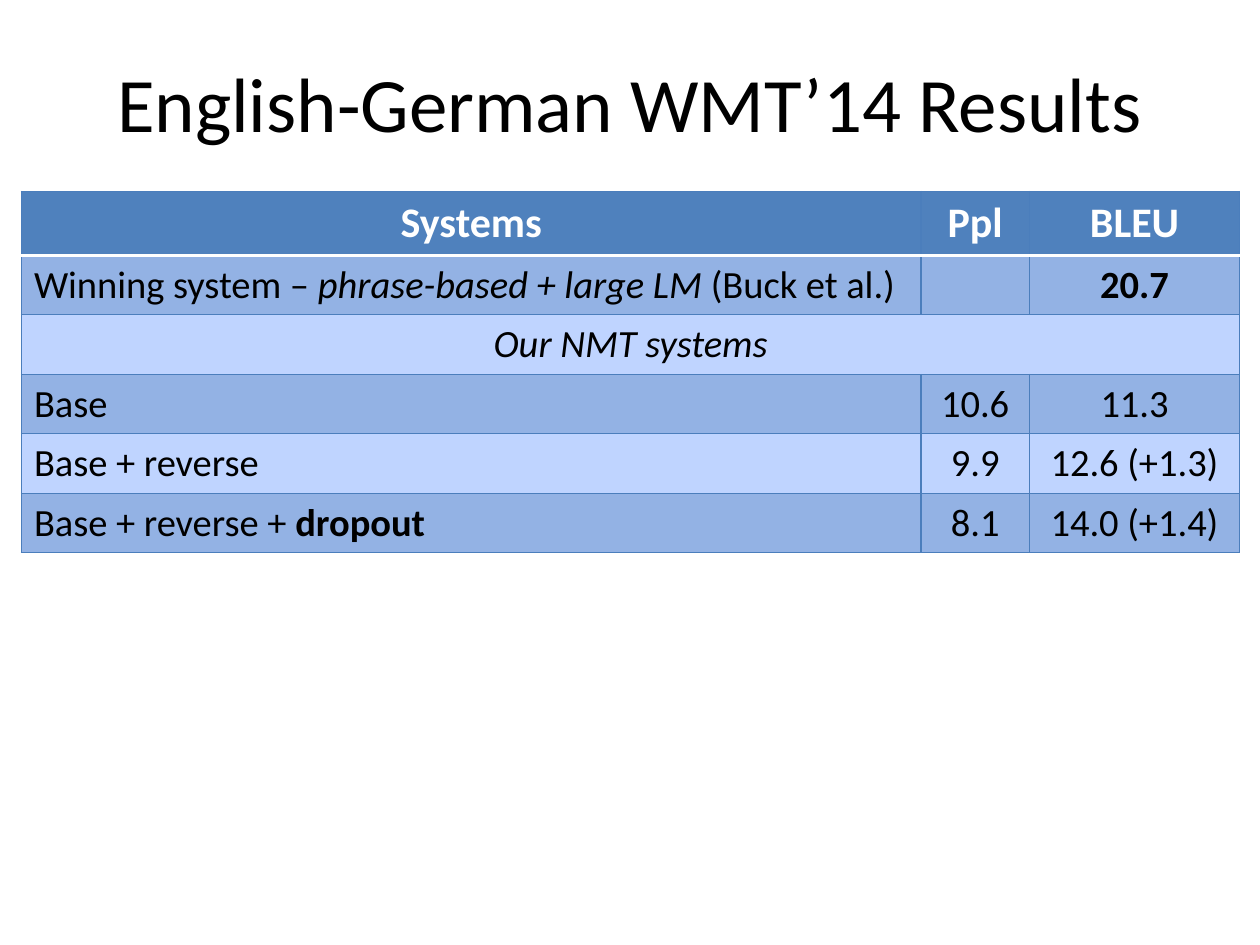
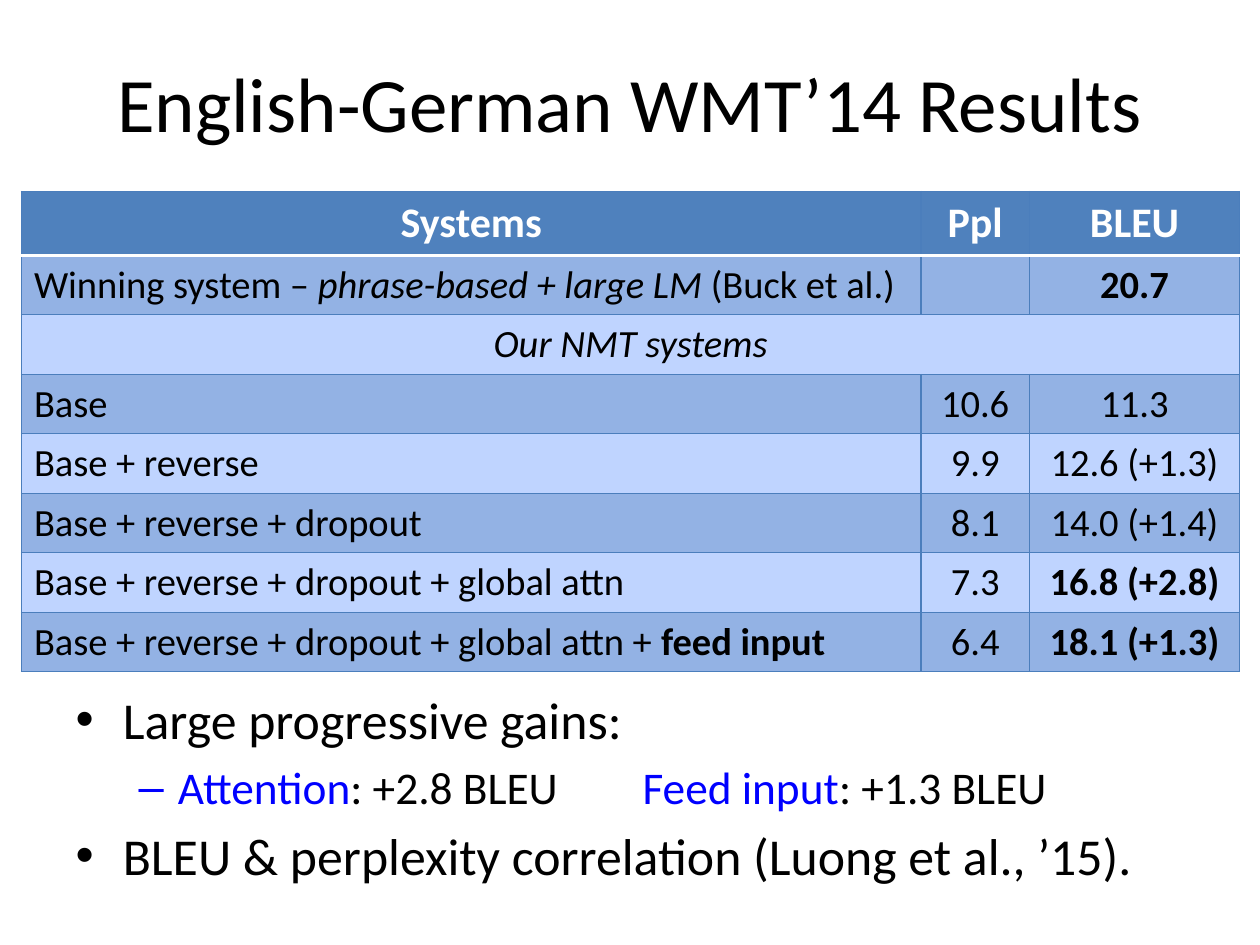
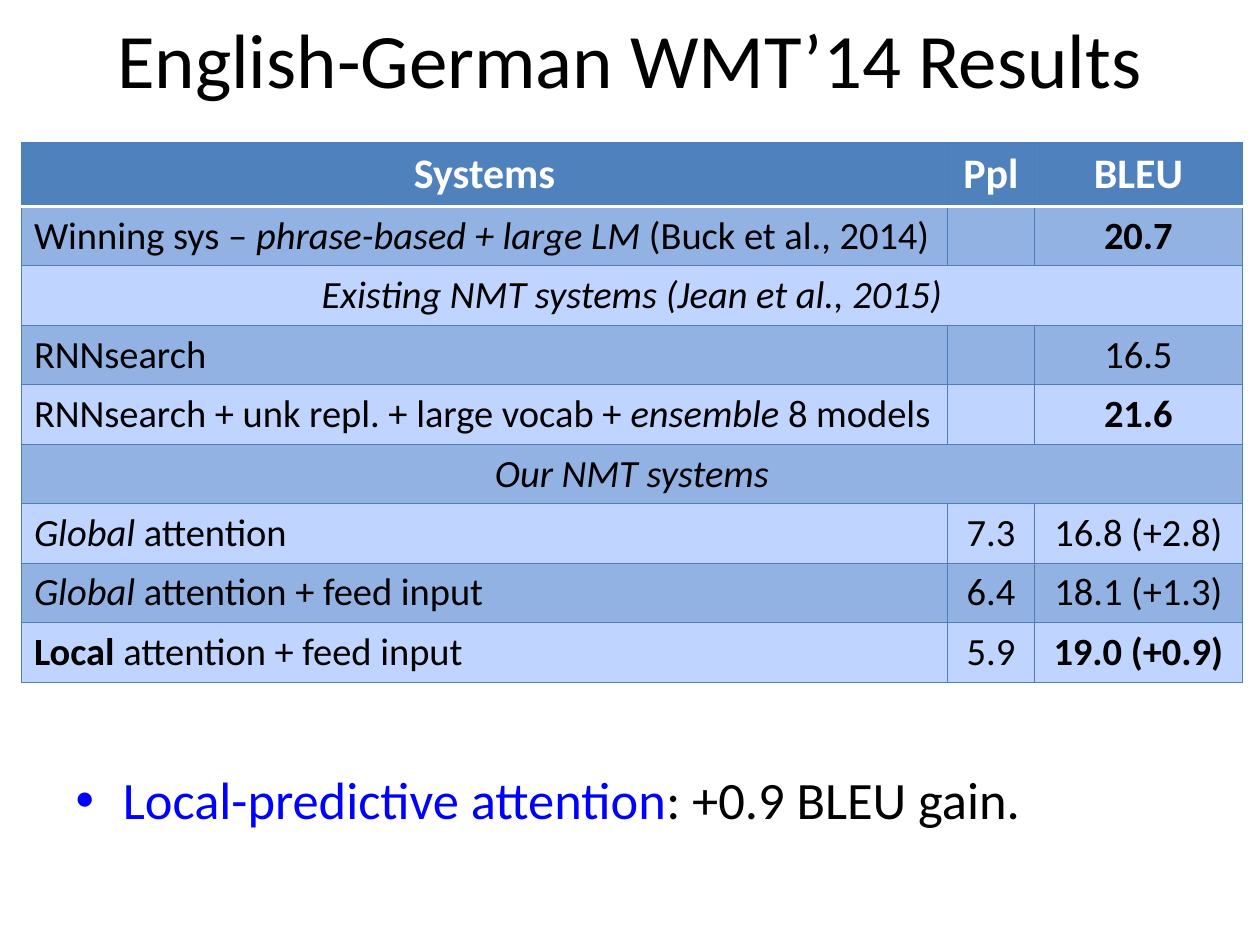
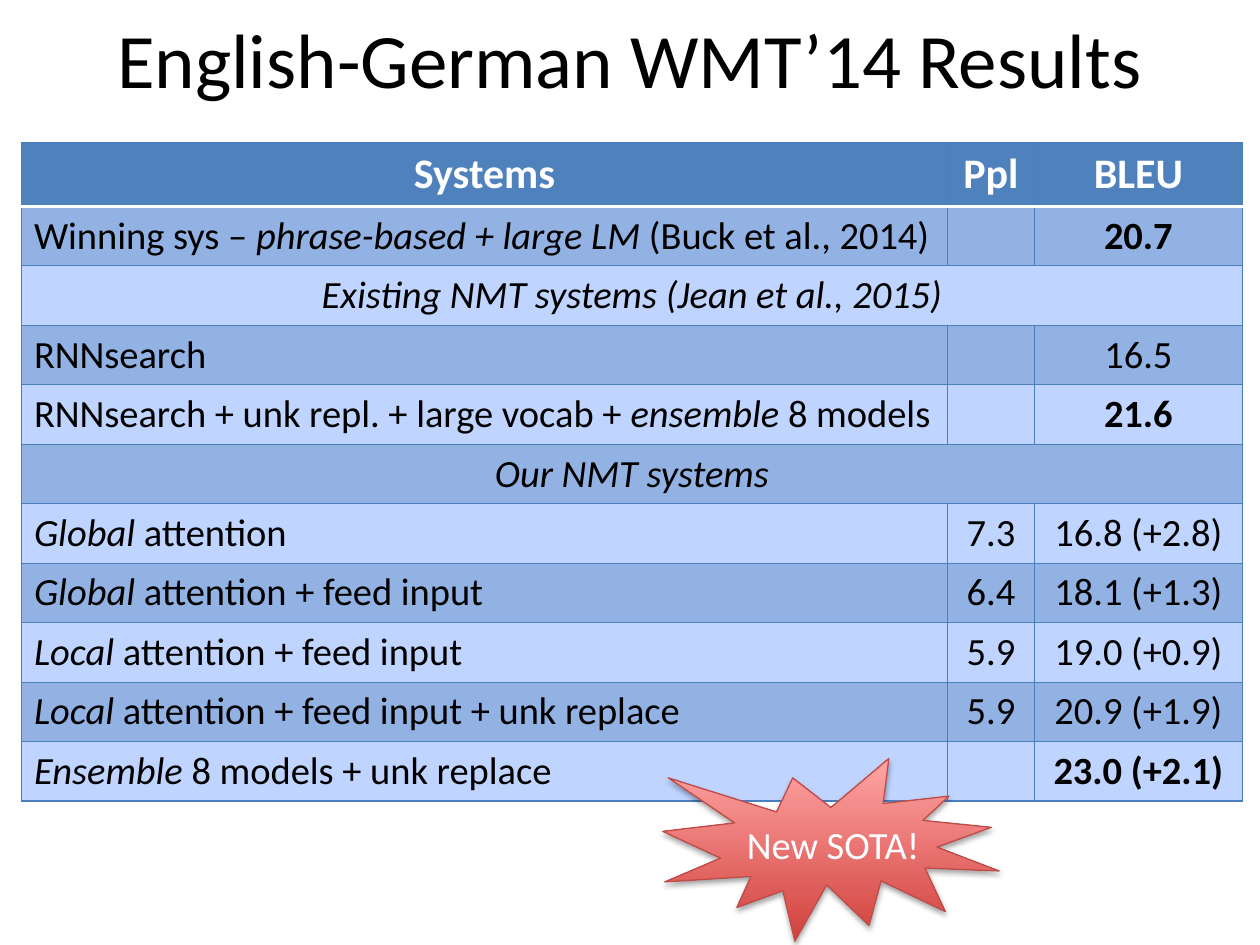
from lxml import etree
from pptx import Presentation
from pptx.dml.color import RGBColor
from pptx.enum.shapes import MSO_SHAPE
from pptx.enum.text import MSO_ANCHOR, MSO_AUTO_SIZE, PP_ALIGN
from pptx.oxml.ns import qn
from pptx.util import Inches, Pt

COLORS = {
    "text": "000000", "white": "FFFFFF", "accent": "0000FF",
    "header": "4F81BD", "border": "4B7EBC",
    "band_dark": "93B2E4", "band_light": "BFD4FF",
    "burst_bottom": "D1403C", "burst_top": "FFA6A5", "burst_line": "BF4C48",
}
FONT = "Calibri"
TITLE = "English-German WMT’14 Results"
HEADER = ["Systems", "Ppl", "BLEU"]
HEADER_HEIGHT, ROW_HEIGHT = 0.5, 0.47
TITLE_ONLY, TITLE_AND_BODY = 5, 1

# A text is a list of parts: plain strings, or (string, style) with b = bold,
# i = italic, a = accent colour. A row with one text spans the whole table.
OUR_SYSTEMS = [[("Our NMT systems", "i")]]
BASE_ROWS = [
    [["Winning system – ", ("phrase-based + large LM ", "i"), "(Buck et al.)"], [], [("20.7", "b")]],
    OUR_SYSTEMS,
    [["Base"], ["10.6"], ["11.3"]],
    [["Base + reverse"], ["9.9"], ["12.6 (+1.3)"]],
]
DROPOUT_ROWS = BASE_ROWS + [
    [["Base + reverse + ", ("dropout", "b")], ["8.1"], ["14.0 (+1.4)"]],
]
ATTENTION_ROWS = BASE_ROWS + [
    [["Base + reverse + dropout"], ["8.1"], ["14.0 (+1.4)"]],
    [["Base + reverse + dropout + global attn"], ["7.3"], [("16.8 (+2.8)", "b")]],
    [["Base + reverse + dropout + global attn + ", ("feed input", "b")], ["6.4"], [("18.1 (+1.3)", "b")]],
]
COMPARISON_ROWS = [
    [["Winning sys – ", ("phrase-based + large LM ", "i"), "(Buck et al., 2014)"], [], [("20.7", "b")]],
    [[("Existing NMT systems (Jean et al., 2015)", "i")]],
    [["RNNsearch"], [], ["16.5"]],
    [["RNNsearch + unk repl. + large vocab + ", ("ensemble", "i"), " 8 models"], [], [("21.6", "b")]],
    OUR_SYSTEMS,
    [[("Global ", "i"), "attention"], ["7.3"], ["16.8 (+2.8)"]],
    [[("Global ", "i"), "attention + feed input"], ["6.4"], ["18.1 (+1.3)"]],
]
LOCAL_ROWS = COMPARISON_ROWS + [
    [[("Local ", "b"), "attention + feed input"], ["5.9"], [("19.0 (+0.9)", "b")]],
]
ENSEMBLE_ROWS = COMPARISON_ROWS + [
    [[("Local ", "i"), "attention + feed input"], ["5.9"], ["19.0 (+0.9)"]],
    [[("Local ", "i"), "attention + feed input + unk replace"], ["5.9"], ["20.9 (+1.9)"]],
    [[("Ensemble", "i"), " 8 models + unk replace"], [], [("23.0 (+2.1)", "b")]],
]


def rgb(name):
    return RGBColor.from_string(COLORS[name])


def add_runs(p, parts, size, color="text"):
    for part in parts:
        text, style = (part, "") if isinstance(part, str) else part
        r = p.add_run()
        r.text = text
        r.font.name = FONT
        r.font.size = Pt(size)
        r.font.bold = "b" in style
        r.font.italic = "i" in style
        r.font.color.rgb = rgb("accent" if "a" in style else color)


def place(sp, box):
    sp.left, sp.top, sp.width, sp.height = map(Inches, box)


def add_title_slide(prs, layout, top):
    slide = prs.slides.add_slide(prs.slide_layouts[layout])
    sp = slide.shapes.title
    place(sp, (0.5, top, 9, 1.25))
    tf = sp.text_frame
    tf.auto_size = MSO_AUTO_SIZE.NONE
    tf.vertical_anchor = MSO_ANCHOR.MIDDLE
    p = tf.paragraphs[0]
    p.alignment = PP_ALIGN.CENTER
    add_runs(p, [TITLE], 44)
    return slide


def set_borders(cell, **special):
    """Rule all four sides; special maps a side to its own (colour, points)."""
    tc_pr = cell._tc.get_or_add_tcPr()
    for side in ("lnL", "lnR", "lnT", "lnB"):
        color, width = special.get(side, ("border", 0.75))
        ln = etree.SubElement(tc_pr, qn("a:" + side), w=str(Pt(width)))
        fill = etree.SubElement(ln, qn("a:solidFill"))
        etree.SubElement(fill, qn("a:srgbClr"), val=COLORS[color])


def format_cell(cell, fill, **borders):
    set_borders(cell, **borders)
    cell.fill.solid()
    cell.fill.fore_color.rgb = rgb(fill)


def add_results_table(slide, left, top, widths, rows):
    height = HEADER_HEIGHT + ROW_HEIGHT * len(rows)
    table = slide.shapes.add_table(
        len(rows) + 1, len(widths), Inches(left), Inches(top),
        Inches(sum(widths)), Inches(height)).table
    for column, width in zip(table.columns, widths):
        column.width = Inches(width)

    rule = ("white", 2)
    table.rows[0].height = Inches(HEADER_HEIGHT)
    for cell, text in zip(table.rows[0].cells, HEADER):
        format_cell(cell, "header", lnB=rule)
        cell.vertical_anchor = MSO_ANCHOR.MIDDLE
        p = cell.text_frame.paragraphs[0]
        p.alignment = PP_ALIGN.CENTER
        add_runs(p, [(text, "b")], 24, "white")

    for i, row in enumerate(rows, start=1):
        table.rows[i].height = Inches(ROW_HEIGHT)
        borders = {"lnT": rule} if i == 1 else {}
        for cell in table.rows[i].cells:
            format_cell(cell, "band_dark" if i % 2 else "band_light", **borders)
        spans = len(row) == 1
        if spans:
            table.cell(i, 0).merge(table.cell(i, len(widths) - 1))
        for j, parts in enumerate(row):
            p = table.cell(i, j).text_frame.paragraphs[0]
            p.alignment = PP_ALIGN.CENTER if j or spans else PP_ALIGN.LEFT
            add_runs(p, parts, 22)


def fill_bullets(slide, box, bullets):
    """Each bullet is (level, size, parts)."""
    sp = slide.placeholders[1]
    place(sp, box)
    tf = sp.text_frame
    tf.auto_size = MSO_AUTO_SIZE.NONE
    for i, (level, size, parts) in enumerate(bullets):
        p = tf.add_paragraph() if i else tf.paragraphs[0]
        p.level = level
        add_runs(p, parts, size)


def add_soft_shadow(sp):
    sp.shadow.inherit = False
    effects = sp._element.spPr.find(qn("a:effectLst"))
    shadow = etree.SubElement(
        effects, qn("a:outerShdw"), blurRad=str(Pt(3.1)), dist=str(Pt(1.8)),
        dir="5400000", rotWithShape="0")
    color = etree.SubElement(shadow, qn("a:srgbClr"), val=COLORS["text"])
    etree.SubElement(color, qn("a:alpha"), val="35000")


def add_burst(slide, box, text):
    sp = slide.shapes.add_shape(MSO_SHAPE.EXPLOSION1, *map(Inches, box))
    sp.fill.gradient()
    sp.fill.gradient_angle = 90
    stops = zip(sp.fill.gradient_stops, (0, 1), ("burst_bottom", "burst_top"))
    for stop, position, color in stops:
        stop.position = position
        stop.color.rgb = rgb(color)
    sp.line.color.rgb = rgb("burst_line")
    sp.line.width = Pt(0.75)
    add_soft_shadow(sp)
    tf = sp.text_frame
    tf.margin_left = tf.margin_right = tf.margin_top = tf.margin_bottom = 0
    tf.vertical_anchor = MSO_ANCHOR.MIDDLE
    p = tf.paragraphs[0]
    p.alignment = PP_ALIGN.CENTER
    add_runs(p, [text], 22, "white")


def add_own_results(prs, layout, rows):
    slide = add_title_slide(prs, layout, 0.18)
    add_results_table(slide, 0.17, 1.52, (7.14, 0.86, 1.67), rows)
    return slide


def add_comparison(prs, layout, rows):
    slide = add_title_slide(prs, layout, -0.17)
    add_results_table(slide, 0.17, 1.13, (7.35, 0.69, 1.65), rows)
    return slide


def main():
    prs = Presentation()
    prs.slide_width, prs.slide_height = Inches(10), Inches(7.5)

    add_own_results(prs, TITLE_ONLY, DROPOUT_ROWS)

    slide = add_own_results(prs, TITLE_AND_BODY, ATTENTION_ROWS)
    fill_bullets(slide, (0.5, 5.41, 9, 1.79), [
        (0, 29.6, ["Large progressive gains:"]),
        (1, 25.9, [("Attention", "a"), ": +2.8 BLEU\t\t",
                   ("Feed input", "a"), ": +1.3 BLEU"]),
        (0, 29.6, ["BLEU & perplexity correlation (Luong et al., ’15)."]),
    ])

    slide = add_comparison(prs, TITLE_AND_BODY, LOCAL_ROWS)
    fill_bullets(slide, (0.5, 6.04, 9.25, 0.58), [
        (0, 30, [("Local-predictive attention", "a"), ": +0.9 BLEU gain."]),
    ])

    slide = add_comparison(prs, TITLE_ONLY, ENSEMBLE_ROWS)
    add_burst(slide, (5.26, 6.02, 2.67, 1.45), " New SOTA!")

    prs.save("out.pptx")


if __name__ == "__main__":
    main()
